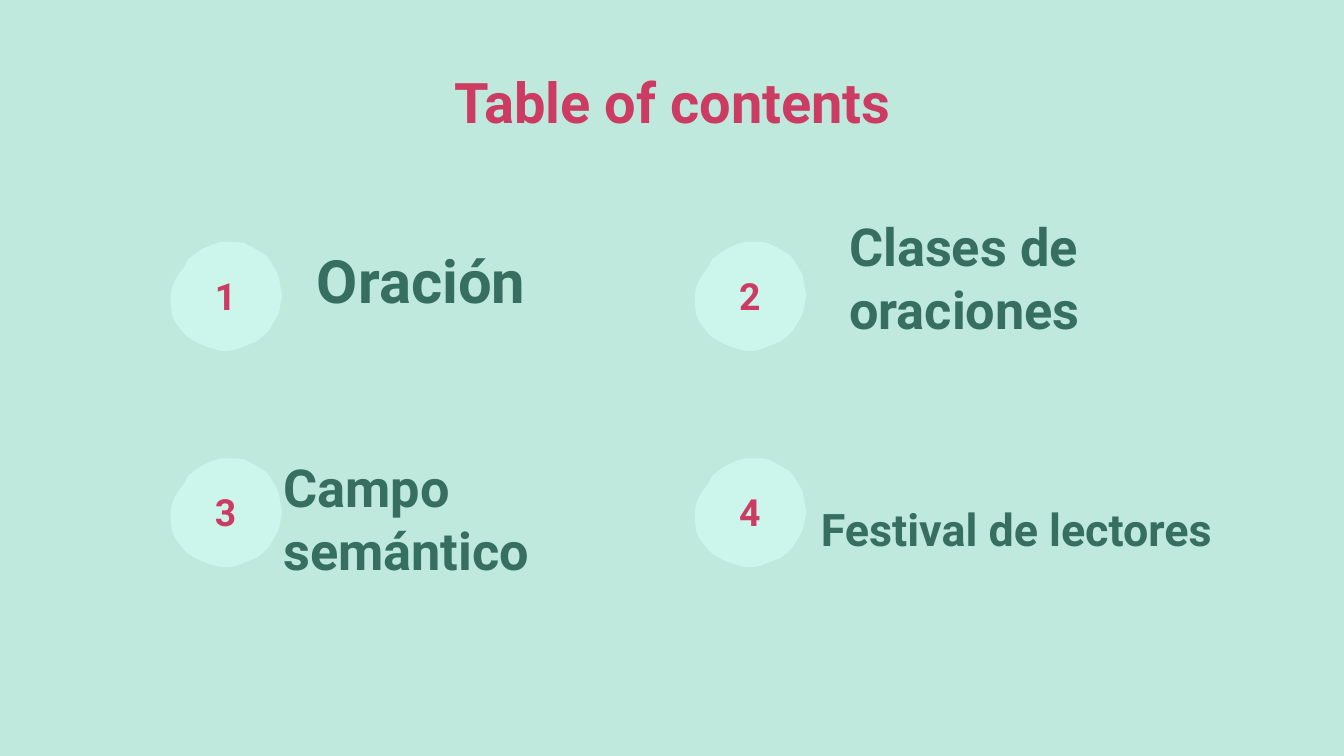
from pptx import Presentation
from pptx.dml.color import RGBColor
from pptx.enum.text import MSO_ANCHOR, MSO_AUTO_SIZE, PP_ALIGN
from pptx.util import Inches, Pt

TOP, MIDDLE, BOTTOM = MSO_ANCHOR.TOP, MSO_ANCHOR.MIDDLE, MSO_ANCHOR.BOTTOM
LEFT, CENTER = PP_ALIGN.LEFT, PP_ALIGN.CENTER
NO_AUTOFIT = MSO_AUTO_SIZE.NONE

MINT = RGBColor(0xBF, 0xE9, 0xDD)
PALE_MINT = RGBColor(0xCC, 0xF6, 0xEB)
CRIMSON = RGBColor(0xCC, 0x3C, 0x62)
GREEN = RGBColor(0x36, 0x6F, 0x60)
FONT = "Roboto"
INSET = Inches(0.1)

SLIDE_WIDTH = Inches(10)
SLIDE_HEIGHT = SLIDE_WIDTH * 9 // 16
TITLE_BOX = (0.79, 0.4, 8.43, 0.6)
GRID_LEFT, GRID_TOP = 1.27, 1.8
COLUMN_STEP, ROW_STEP = 3.9, 1.61
COLUMNS = 2
NUMBER_BOX = (0.01, 0.15, 0.8, 0.5)

# Label, text size, label box relative to its grid cell
ENTRIES = [
    ("Oración", 32, (0.99, 0.25, 2.56, 0.4)),
    ("Clases de oraciones", 28, (1.05, 0.16, 3.04, 0.67)),
    ("Campo semántico", 28, (0.74, 0.61, 3.25, 0.4)),
    ("Festival de lectores", 24, (0.84, 0.01, 3.2, 0.81)),
]

# Outline of the badge in hundredths of an inch, from its top left corner
BADGE_OUTLINE = [
    (43, 0), (37, 0), (31, 2), (24, 5), (18, 9), (13, 13), (10, 19),
    (6, 24), (3, 29), (1, 34), (0, 40), (0, 46), (1, 54), (3, 59),
    (6, 63), (9, 67), (13, 71), (18, 74), (22, 76), (27, 78), (33, 80),
    (38, 81), (44, 81), (49, 80), (54, 78), (59, 76), (64, 74), (69, 70),
    (73, 66), (76, 61), (79, 56), (81, 51), (82, 45), (83, 40), (82, 35),
    (81, 29), (80, 24), (77, 19), (74, 14), (71, 10), (66, 7), (61, 4),
    (55, 1), (50, 0),
]


def write(shape, text, size, color, align, anchor):
    frame = shape.text_frame
    frame.auto_size = NO_AUTOFIT
    frame.word_wrap = True
    frame.vertical_anchor = anchor
    frame.margin_left = frame.margin_right = INSET
    frame.margin_top = frame.margin_bottom = INSET
    para = frame.paragraphs[0]
    para.text = text
    para.alignment = align
    para.font.name = FONT
    para.font.size = Pt(size)
    para.font.bold = True
    para.font.color.rgb = color


def add_title(page, box, text):
    title = page.shapes.title
    title.left, title.top, title.width, title.height = map(Inches, box)
    write(title, text, 30, CRIMSON, CENTER, TOP)


def add_text(page, cell, box, *style):
    """Add a text box whose position is relative to the cell's corner."""
    left, top, width, height = box
    lengths = (cell[0] + left, cell[1] + top, width, height)
    write(page.shapes.add_textbox(*map(Inches, lengths)), *style)


def add_badge(page, cell):
    builder = page.shapes.build_freeform(*BADGE_OUTLINE[0], scale=Inches(0.01))
    builder.add_line_segments(BADGE_OUTLINE[1:], close=True)
    badge = builder.convert_to_shape(*map(Inches, cell))
    badge.shadow.inherit = False
    badge.fill.solid()
    badge.fill.fore_color.rgb = PALE_MINT
    badge.line.fill.background()


def add_entry(page, cell, number, label, size, label_box):
    add_badge(page, cell)
    add_text(page, cell, NUMBER_BOX, str(number), 20, CRIMSON, CENTER, MIDDLE)
    add_text(page, cell, label_box, label, size, GREEN, LEFT, BOTTOM)


def main():
    deck = Presentation()
    deck.slide_width, deck.slide_height = SLIDE_WIDTH, SLIDE_HEIGHT
    page = deck.slides.add_slide(deck.slide_layouts.get_by_name("Title Only"))
    page.background.fill.solid()
    page.background.fill.fore_color.rgb = MINT
    add_title(page, TITLE_BOX, "Table of contents")
    for index, entry in enumerate(ENTRIES):
        row, column = divmod(index, COLUMNS)
        cell = (GRID_LEFT + column * COLUMN_STEP, GRID_TOP + row * ROW_STEP)
        add_entry(page, cell, index + 1, *entry)
    deck.save("out.pptx")


if __name__ == "__main__":
    main()
